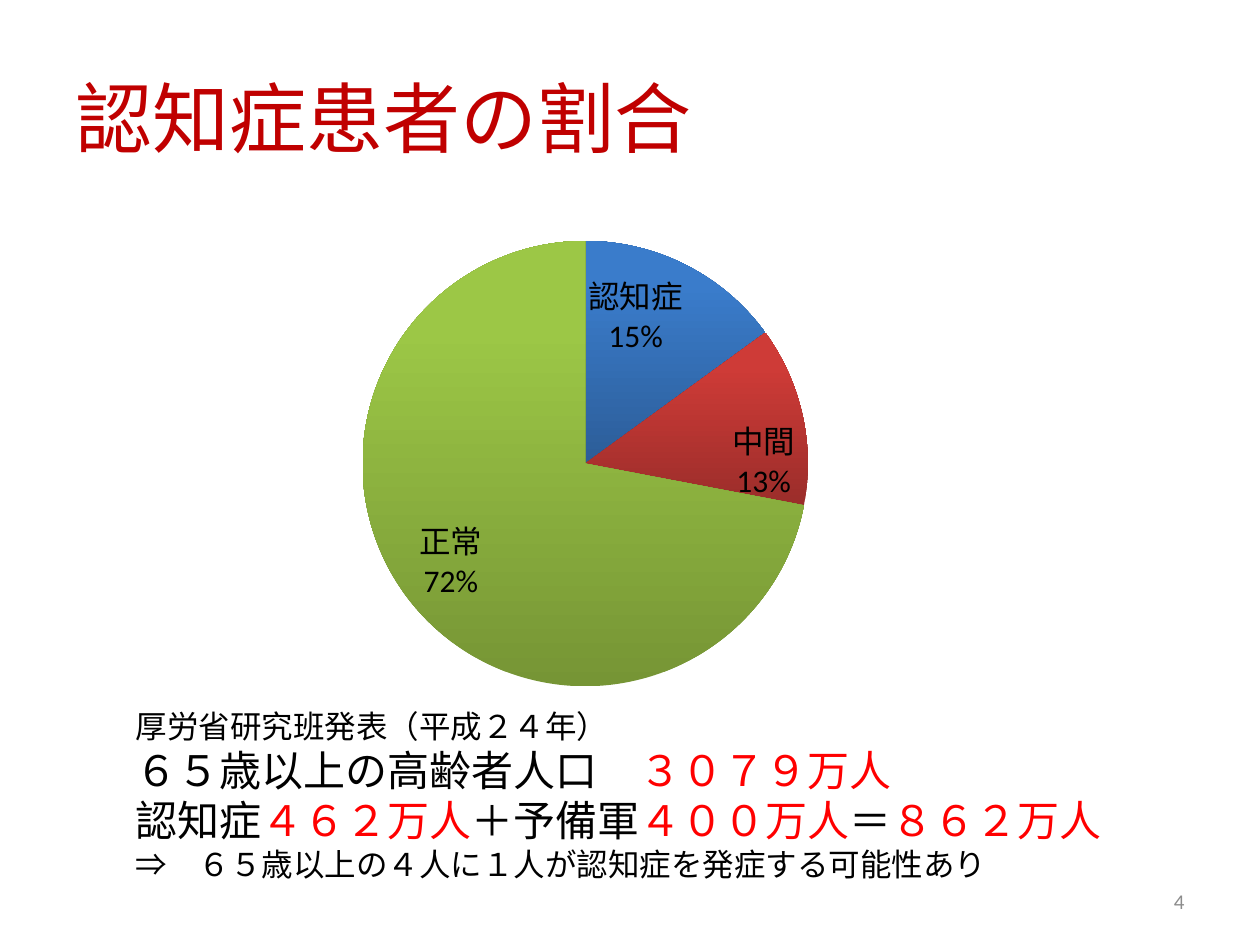
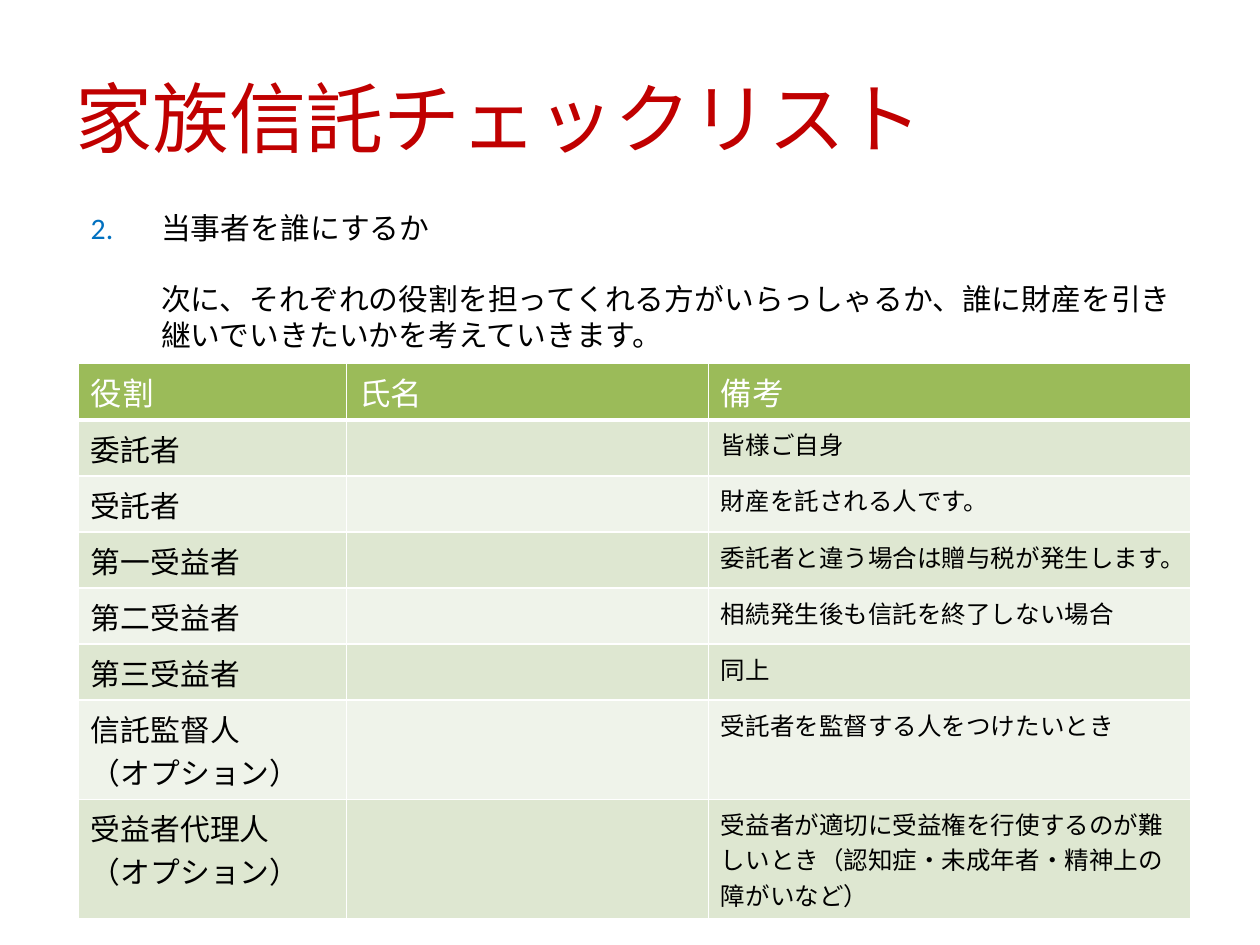
from lxml.etree import SubElement
from pptx import Presentation
from pptx.chart.data import CategoryChartData
from pptx.dml.color import RGBColor
from pptx.enum.chart import XL_CHART_TYPE as ChartType, XL_LABEL_POSITION as LabelPosition
from pptx.enum.text import MSO_ANCHOR as Anchor, PP_ALIGN as Align
from pptx.oxml import parse_xml
from pptx.oxml.ns import nsdecls, qn
from pptx.util import Cm, Pt

FONT = "Calibri"
BLACK, WHITE, RED, TITLE_RED = "000000", "FFFFFF", "FF0000", "C00000"
GRAY, NUMBER_BLUE = "8C8C8C", "0070C0"
HEADER_GREEN, BAND_DARK, BAND_LIGHT = "9BBB59", "DEE7D1", "EFF3EA"

TITLE_BOX = (1.27, 0.76, 22.86, 3.18)
PAGE_BOX = (18.21, 17.65, 5.92, 1.02)
PIE_BOX = (4.09, 2.92, 16.94, 11.28)
FINDINGS_BOX = (2.49, 14.12, 20.19, 3.84)
STEP_BOX = (1.27, 4.11, 22.86, 13.69)
ROLES_ORIGIN = (1.58, 7.32)

PIE_LAYOUT = {"x": 0.19, "y": 0.17, "w": 0.53, "h": 0.8}
SHARES = [
    ("認知症", 15, ("2C5D98", "3A7CCB")),
    ("中間", 13, ("9B2D2A", "CE3B37")),
    ("正常", 72, ("769535", "9CC746")),
]
FINDINGS = [
    (18, [("厚労省研究班発表（平成２４年）", BLACK)]),
    (24, [("６５歳以上の高齢者人口　", BLACK), ("３０７９万人", RED)]),
    (24, [("認知症", BLACK), ("４６２万人", RED), ("＋予備軍", BLACK),
          ("４００万人", RED), ("＝", BLACK), ("８６２万人", RED)]),
    (18, [("⇒　６５歳以上の４人に１人が認知症を発症する可能性あり", BLACK)]),
]
STEP = "当事者を誰にするか"
STEP_DETAIL = "次に、それぞれの役割を担ってくれる方がいらっしゃるか、誰に財産を引き継いでいきたいかを考えていきます。"
ROLE_WIDTHS = (5.41, 7.29, 9.73)
ROLE_HEIGHTS = (1.15, *[1.13] * 5, 2.0, 2.4)
ROLES = [
    ("役割", "氏名", "備考"),
    ("委託者", "", "皆様ご自身"),
    ("受託者", "", "財産を託される人です。"),
    ("第一受益者", "", "委託者と違う場合は贈与税が発生します。"),
    ("第二受益者", "", "相続発生後も信託を終了しない場合"),
    ("第三受益者", "", "同上"),
    ("信託監督人\n（オプション）", "", "受託者を監督する人をつけたいとき"),
    ("受益者代理人\n（オプション）", "",
     "受益者が適切に受益権を行使するのが難しいとき（認知症・未成年者・精神上の障がいなど）"),
]


def rgb(value):
    """Turn a hex string into a colour."""
    return RGBColor.from_string(value)


def apply_format(target, formats):
    """Set each attribute named in a dict of format values."""
    for attribute, value in formats.items():
        setattr(target, attribute, value)


def style_font(font, size, color):
    """Give a font the deck's typeface with a size and colour."""
    apply_format(font, {"name": FONT, "size": Pt(size)})
    font.color.rgb = rgb(color)


def add_run(paragraph, text, size, color):
    """Append a run whose East Asian text uses the same typeface."""
    run = paragraph.add_run()
    run.text = text
    style_font(run.font, size, color)
    SubElement(run.font._element, qn("a:ea"), typeface=FONT)


def add_frame(slide, box, **formats):
    """Add a wrapping text box and return its frame."""
    frame = slide.shapes.add_textbox(*map(Cm, box)).text_frame
    apply_format(frame, {"word_wrap": True, **formats})
    return frame


def add_title(slide, text):
    """Place the shared red slide title."""
    frame = add_frame(slide, TITLE_BOX, vertical_anchor=Anchor.MIDDLE)
    add_run(frame.paragraphs[0], text, 44, TITLE_RED)


def add_page_number(slide, number):
    """Place the page number at the lower right."""
    frame = add_frame(slide, PAGE_BOX, vertical_anchor=Anchor.MIDDLE)
    frame.paragraphs[0].alignment = Align.RIGHT
    add_run(frame.paragraphs[0], str(number), 12, GRAY)


def add_findings(slide, box):
    """Write the survey findings with their figures in red."""
    frame = add_frame(slide, box)
    for index, (size, parts) in enumerate(FINDINGS):
        line = frame.add_paragraph() if index else frame.paragraphs[0]
        for text, color in parts:
            add_run(line, text, size, color)


def fix_plot_layout(chart):
    """Pin the pie inside its chart area."""
    plot_area = chart._chartSpace.chart.plotArea
    for layout in plot_area.findall(qn("c:layout")):
        plot_area.remove(layout)
    sizes = "".join(f'<c:{key} val="{value}"/>' for key, value in PIE_LAYOUT.items())
    plot_area.insert(0, parse_xml(
        f'<c:layout {nsdecls("c")}><c:manualLayout><c:layoutTarget val="inner"/>'
        f'<c:xMode val="edge"/><c:yMode val="edge"/>{sizes}</c:manualLayout></c:layout>'))


def add_share_pie(slide, box):
    """Draw the shares as a pie with shaded slices."""
    names, values, shades = zip(*SHARES)
    data = CategoryChartData()
    data.categories = names
    data.add_series("Series 1", values)
    chart = slide.shapes.add_chart(ChartType.PIE, *map(Cm, box), data).chart
    apply_format(chart, {"has_title": False, "has_legend": False})
    style_font(chart.font, 18, BLACK)
    fix_plot_layout(chart)
    plot = chart.plots[0]
    apply_format(plot, {"vary_by_categories": True, "has_data_labels": True})
    labels = plot.data_labels
    apply_format(labels, {
        "show_category_name": True, "show_percentage": True, "show_value": False,
        "number_format": "0%", "number_format_is_linked": False,
        "position": LabelPosition.INSIDE_END})
    style_font(labels.font, 18, BLACK)
    separator = parse_xml(f'<c:separator {nsdecls("c")}>\n</c:separator>')
    labels._element.find(qn("c:showBubbleSize")).addnext(separator)
    for index, colors in enumerate(shades):
        fill = plot.series[0].points[index].format.fill
        fill.gradient()
        fill.gradient_angle = 90
        for stop, color, position in zip(fill.gradient_stops, colors, (0, 0.8)):
            stop.color.rgb = rgb(color)
            stop.position = position


def add_step(slide, box):
    """Write the numbered step and its indented explanation."""
    frame = add_frame(slide, box)
    heading, detail = frame.paragraphs[0], frame.add_paragraph()
    detail.space_before = Pt(20)
    for paragraph, text, indent in ((heading, STEP, -1.42), (detail, STEP_DETAIL, 0)):
        add_run(paragraph, text, 17, BLACK)
        properties = paragraph._p.get_or_add_pPr()
        properties.set("marL", str(Cm(1.73)))
        properties.set("indent", str(Cm(indent)))
    numbering = heading._p.get_or_add_pPr()
    SubElement(SubElement(numbering, qn("a:buClr")), qn("a:srgbClr"), val=NUMBER_BLUE)
    SubElement(numbering, qn("a:buFont"), typeface=FONT)
    SubElement(numbering, qn("a:buAutoNum"), type="arabicPeriod", startAt="2")


def style_cell(cell, fill, bottom):
    """Fill a cell and rule it in white."""
    properties = cell._tc.get_or_add_tcPr()
    for side, width in (("L", 1), ("R", 1), ("T", 1), ("B", bottom)):
        line = SubElement(properties, qn(f"a:ln{side}"), w=str(Pt(width)))
        SubElement(SubElement(line, qn("a:solidFill")), qn("a:srgbClr"), val=WHITE)
    cell.fill.solid()
    cell.fill.fore_color.rgb = rgb(fill)


def add_roles(slide, origin):
    """Draw the checklist of roles, names and remarks."""
    extent = (sum(ROLE_WIDTHS), sum(ROLE_HEIGHTS))
    roles = slide.shapes.add_table(
        len(ROLES), len(ROLE_WIDTHS), *map(Cm, origin + extent)).table
    for column, width in zip(roles.columns, ROLE_WIDTHS):
        column.width = Cm(width)
    for index, (row, height, texts) in enumerate(zip(roles.rows, ROLE_HEIGHTS, ROLES)):
        row.height = Cm(height)
        header = index == 0
        fill = HEADER_GREEN if header else (BAND_LIGHT, BAND_DARK)[index % 2]
        sizes = (18, 18, 18) if header else (17, 18, 14)
        for cell, text, size in zip(row.cells, texts, sizes):
            style_cell(cell, fill, 3 if header else 1)
            if text:
                cell.text_frame.text = text
            for paragraph in cell.text_frame.paragraphs:
                for run in paragraph.runs:
                    style_font(run.font, size, WHITE if header else BLACK)


def build_share_slide(slide):
    """Build the slide on the share of dementia patients."""
    add_title(slide, "認知症患者の割合")
    add_page_number(slide, 4)
    add_findings(slide, FINDINGS_BOX)
    add_share_pie(slide, PIE_BOX)


def build_checklist_slide(slide):
    """Build the family trust checklist slide."""
    add_step(slide, STEP_BOX)
    add_title(slide, "家族信託チェックリスト")
    add_roles(slide, ROLES_ORIGIN)


def main():
    """Build and save the deck."""
    deck = Presentation()
    apply_format(deck, {"slide_width": Cm(25.4), "slide_height": Cm(19.05)})
    for build in (build_share_slide, build_checklist_slide):
        build(deck.slides.add_slide(deck.slide_layouts[6]))
    deck.save("out.pptx")


if __name__ == "__main__":
    main()
